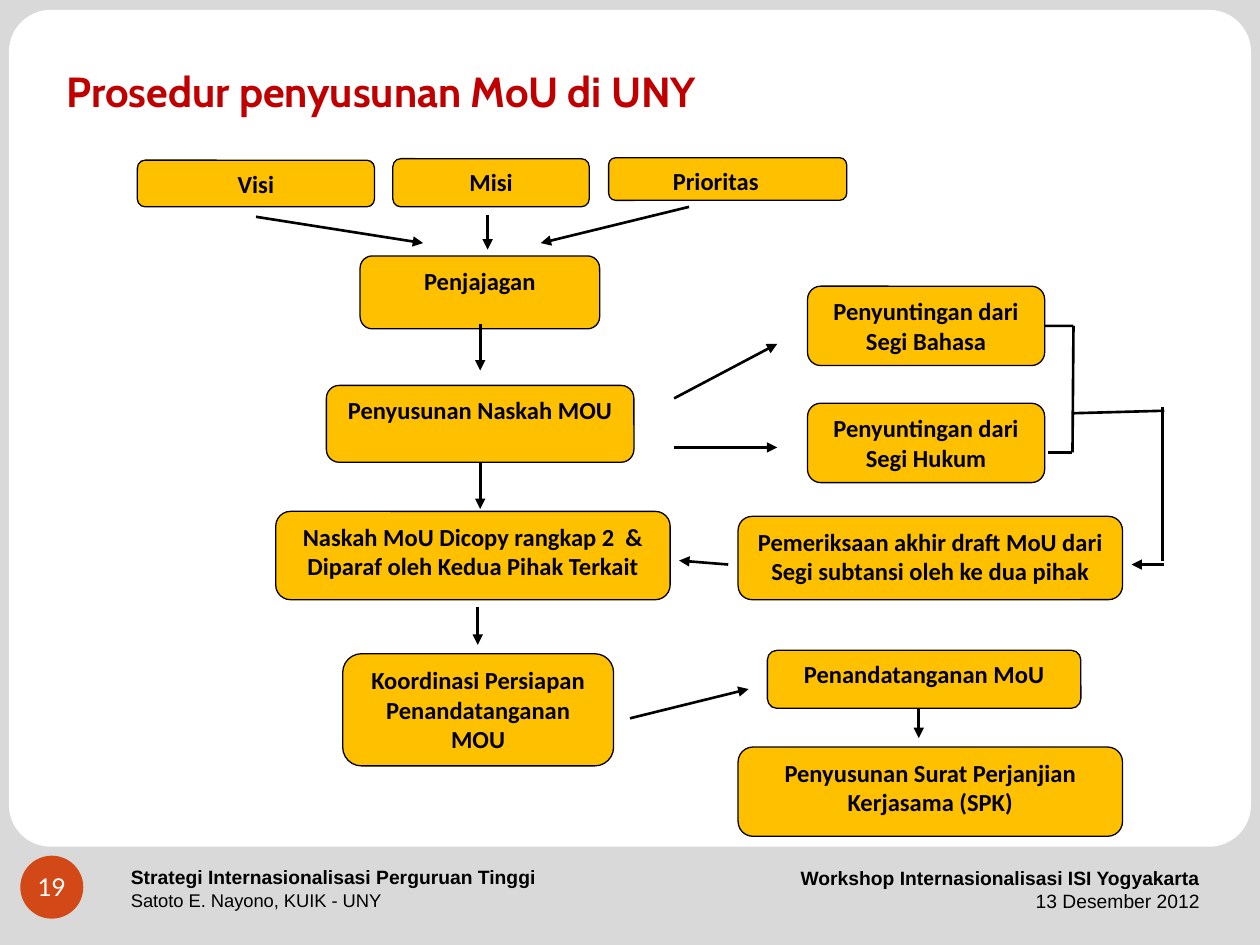
import pptx
import pptx.util
import pptx.dml.color
import pptx.enum.shapes
import pptx.enum.text
import pptx.oxml.ns
import lxml.etree

Cm = pptx.util.Cm
Pt = pptx.util.Pt
SHAPE = pptx.enum.shapes.MSO_SHAPE
ALIGN = pptx.enum.text.PP_ALIGN
ANCHOR = pptx.enum.text.MSO_ANCHOR

COLORS = {
    "frame": "D9D9D9",
    "panel": "FFFFFF",
    "badge": "D34817",
    "title": "C00000",
    "step": "FFC000",
    "ink": "000000",
}

STEPS = {
    "explore": ("Penjajagan", 7.26, 5.16, 4.83, 1.47),
    "draft": ("Penyusunan Naskah MOU", 6.58, 7.77, 6.2, 1.55),
    "language": ("Penyuntingan dari Segi Bahasa", 16.28, 5.77, 4.78, 1.6),
    "law": ("Penyuntingan dari Segi Hukum", 16.28, 8.13, 4.78, 1.6),
    "check": ("Pemeriksaan akhir draft MoU dari Segi subtansi oleh ke dua pihak",
              14.88, 10.41, 7.75, 1.68),
    "priority": ("Prioritas", 12.27, 3.18, 4.8, 0.86),
    "initial": ("Naskah MoU Dicopy rangkap 2  & Diparaf oleh Kedua Pihak Terkait",
                5.56, 10.31, 7.95, 1.78),
    "contract": ("Penyusunan Surat Perjanjian Kerjasama (SPK)", 14.88, 15.06, 7.75, 1.8),
    "prepare": ("Koordinasi Persiapan Penandatanganan MOU", 6.91, 13.18, 5.46, 2.26),
    "sign": ("Penandatanganan MoU", 15.47, 13.11, 6.32, 1.17),
    "mission": ("Misi", 7.92, 3.2, 3.96, 0.97),
    "vision": ("Visi", 2.77, 3.23, 4.78, 0.94),
}

ARROWS = [
    (5.16, 4.37, 8.53, 4.9),
    (9.83, 4.34, 9.83, 5.03),
    (13.89, 4.17, 10.9, 4.9),
    (9.68, 6.53, 9.68, 7.47),
    (13.59, 8.03, 15.67, 6.93),
    (13.59, 9.02, 15.67, 9.02),
    (23.47, 11.38, 22.81, 11.38),
    (14.68, 11.38, 13.69, 11.3),
    (9.63, 12.24, 9.63, 13),
    (12.7, 14.48, 15.09, 13.89),
    (18.52, 14.3, 18.52, 14.88),
]

BRACKET = [
    (21.13, 9.12, 21.62, 9.12),
    (21.64, 6.57, 21.62, 9.12),
    (21.64, 8.33, 23.47, 8.28),
    (23.44, 8.2, 23.44, 11.3),
]


class ProcedureSlide:
    """Holds the style and the current slide and draws its elements."""

    def __init__(self, deck):
        self.slide = deck.slides.add_slide(deck.slide_layouts[5])
        self.shapes = self.slide.shapes
        self.slide.background.fill.solid()
        self.slide.background.fill.fore_color.rgb = self.color("frame")

    def color(self, name):
        return pptx.dml.color.RGBColor.from_string(COLORS[name])

    def format(self, paragraph, size, font, color, bold, align):
        paragraph.alignment = align
        for run in paragraph.runs:
            run.font.size = Pt(size)
            run.font.name = font
            run.font.bold = bold
            run.font.color.rgb = self.color(color)

    def title(self, wording, left, top, width, height):
        heading = self.shapes.title
        heading.left, heading.top = Cm(left), Cm(top)
        heading.width, heading.height = Cm(width), Cm(height)
        frame = heading.text_frame
        frame.text = wording
        frame.vertical_anchor = ANCHOR.BOTTOM
        frame.margin_left = frame.margin_right = frame.margin_bottom = Cm(0.25)
        frame.margin_top = Cm(0.13)
        self.format(frame.paragraphs[0], 24, "Cabin", "title", True, ALIGN.LEFT)

    def filled(self, kind, fill, left, top, width, height):
        shape = self.shapes.add_shape(kind, Cm(left), Cm(top), Cm(width), Cm(height))
        shape.shadow.inherit = False
        shape.fill.solid()
        shape.fill.fore_color.rgb = self.color(fill)
        shape.line.fill.background()
        return shape

    def panel(self, left, top, width, height):
        panel = self.filled(SHAPE.ROUNDED_RECTANGLE, "panel", left, top, width, height)
        panel.adjustments[0] = 0.05
        self.shapes._spTree.insert(2, panel._element)

    def badge(self, number, left, top, diameter):
        badge = self.filled(SHAPE.OVAL, "badge", left, top, diameter, diameter)
        frame = badge.text_frame
        frame.text = number
        frame.word_wrap = False
        frame.vertical_anchor = ANCHOR.MIDDLE
        frame.margin_left = frame.margin_right = frame.margin_top = frame.margin_bottom = 0
        self.format(frame.paragraphs[0], 14, "Lato", "panel", False, ALIGN.CENTER)

    def step(self, wording, left, top, width, height):
        step = self.filled(SHAPE.ROUNDED_RECTANGLE, "step", left, top, width, height)
        step.line.color.rgb = self.color("ink")
        step.line.width = Pt(0.75)
        frame = step.text_frame
        frame.text = wording
        frame.word_wrap = True
        frame.vertical_anchor = ANCHOR.TOP
        self.format(frame.paragraphs[0], 14, "Calibri", "ink", True, ALIGN.CENTER)
        return step

    def connector(self, x1, y1, x2, y2, arrow=False):
        connector = self.shapes.add_connector(
            pptx.enum.shapes.MSO_CONNECTOR.STRAIGHT, Cm(x1), Cm(y1), Cm(x2), Cm(y2))
        connector.line.color.rgb = self.color("ink")
        connector.line.width = Pt(1.5)
        qn = pptx.oxml.ns.qn
        if arrow:
            lxml.etree.SubElement(connector.line._get_or_add_ln(), qn("a:tailEnd"), type="triangle")
        lxml.etree.SubElement(connector._element.spPr, qn("a:effectLst"))
        return connector

    def footer(self, heading, detail, detail_size, align, left, top, width, height):
        box = self.shapes.add_textbox(Cm(left), Cm(top), Cm(width), Cm(height))
        frame = box.text_frame
        frame.word_wrap = True
        frame.vertical_anchor = ANCHOR.MIDDLE
        frame.text = f"{heading}\n{detail}"
        first, second = frame.paragraphs
        self.format(first, 11, "Arial", "ink", True, align)
        self.format(second, detail_size, "Arial", "ink", False, align)


def main():
    deck = pptx.Presentation()
    deck.slide_width, deck.slide_height = Cm(25.4), Cm(19.05)
    page = ProcedureSlide(deck)
    page.panel(0.18, 0.2, 25.04, 16.87)
    page.title("Prosedur penyusunan MoU di UNY", 1.09, 0.58, 23.01, 2.01)
    page.footer("Strategi Internasionalisasi Perguruan Tinggi", "Satoto E. Nayono, KUIK - UNY",
                10.5, ALIGN.LEFT, 2.39, 17.27, 11, 1.27)
    page.footer("Workshop Internasionalisasi ISI Yogyakarta", "13 Desember 2012",
                11, ALIGN.RIGHT, 15.88, 17.27, 8.56, 1.32)
    page.badge("19", 0.41, 17.25, 1.27)

    steps = {name: page.step(*details) for name, details in STEPS.items()}
    steps["priority"].text_frame.margin_right = Cm(0.73)

    for ends in ARROWS:
        page.connector(*ends, arrow=True)
    for ends in BRACKET:
        page.connector(*ends)
    page.connector(9.68, 9.32, 9.68, 10.26, arrow=True).begin_connect(steps["draft"], 2)
    page.connector(21.06, 6.57, 21.64, 6.57).begin_connect(steps["language"], 3)
    deck.save("out.pptx")


if __name__ == "__main__":
    main()
